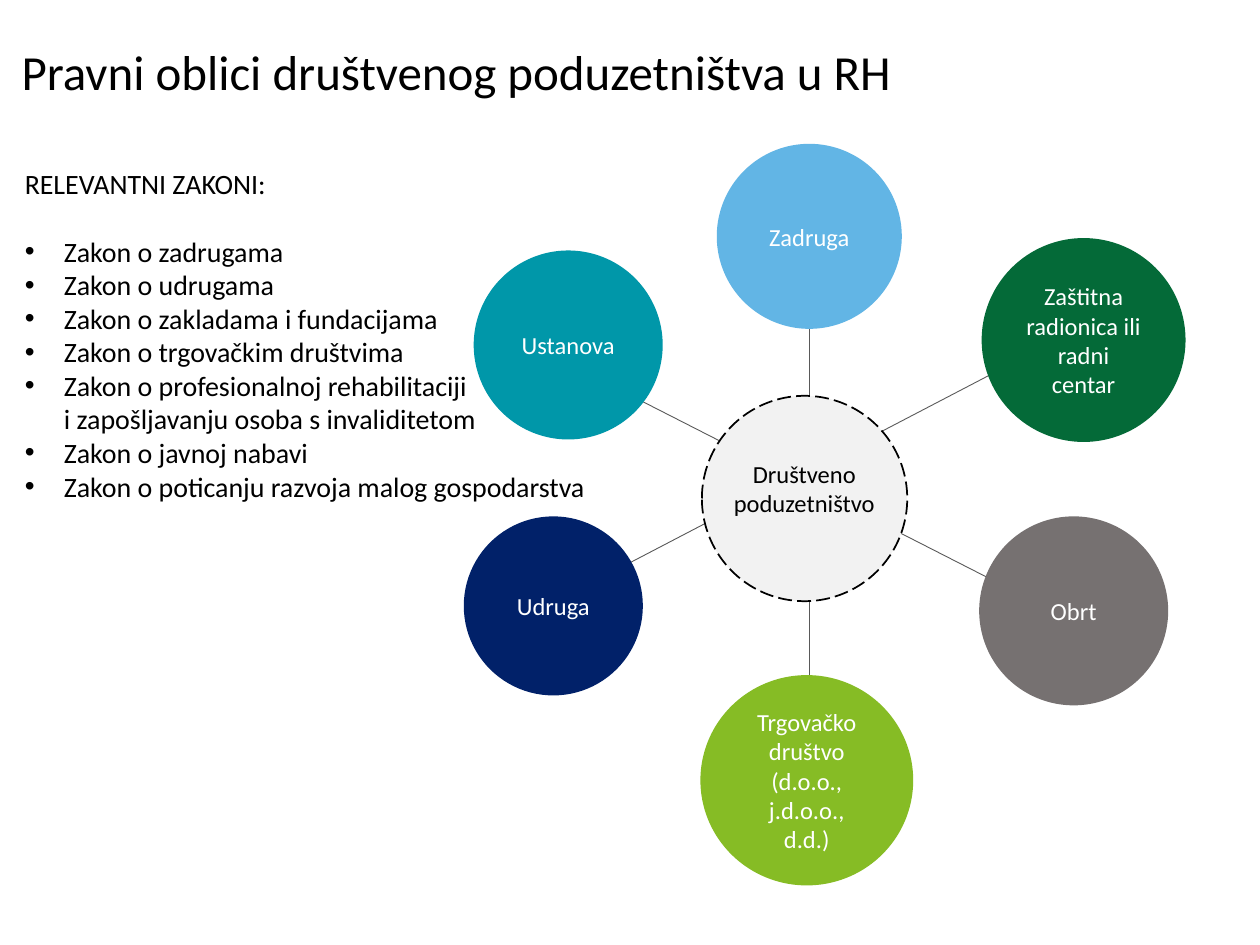
from dataclasses import dataclass
from typing import NamedTuple

from lxml.etree import SubElement
from pptx import Presentation
from pptx.dml.color import RGBColor
from pptx.enum.dml import MSO_LINE
from pptx.enum.shapes import MSO_CONNECTOR, MSO_SHAPE
from pptx.enum.text import MSO_ANCHOR, MSO_AUTO_SIZE, PP_ALIGN
from pptx.oxml.ns import qn
from pptx.util import Cm, Pt


@dataclass(frozen=True)
class Theme:
    font: str = "Calibri"
    title_size: int = 28
    list_size: int = 16
    label_size: int = 14
    text: str = "000000"
    label: str = "FFFFFF"
    spoke: str = "595959"
    hub: str = "F2F2F2"


class Circle(NamedTuple):
    label: str
    left: float
    top: float
    width: float
    height: float
    color: str


class Spoke(NamedTuple):
    x1: float
    y1: float
    x2: float
    y2: float


class Law(NamedTuple):
    name: str
    bulleted: bool = True


THEME = Theme()
INSET = Cm(0.25)
LIST_INDENT = Cm(0.79)

SPOKES = [
    Spoke(11.46, 11.99, 21.16, 6.93),
    Spoke(21.59, 12.5, 11.63, 7.42),
    Spoke(16.31, 5.66, 16.31, 14.02),
]
HUB = Circle("", 14.15, 7.98, 4.14, 4.14, THEME.hub)
LEGAL_FORMS = [
    Circle("Udruga", 9.35, 10.41, 3.61, 3.61, "012169"),
    Circle("Zaštitna radionica ili radni centar", 19.79, 4.8, 4.11, 4.11, "046A38"),
    Circle("Ustanova", 9.55, 5.05, 3.81, 3.81, "0097A9"),
    Circle("Trgovačko društvo (d.o.o., j.d.o.o., d.d.)", 14.12, 13.61, 4.29, 4.24, "86BC25"),
    Circle("Obrt", 19.74, 10.41, 3.81, 3.81, "767171"),
    Circle("Zadruga", 14.45, 2.9, 3.73, 3.73, "62B5E5"),
]
LAWS = [
    Law("Zakon o zadrugama"),
    Law("Zakon o udrugama"),
    Law("Zakon o zakladama i fundacijama"),
    Law("Zakon o trgovačkim društvima"),
    Law("Zakon o profesionalnoj rehabilitaciji"),
    Law("i zapošljavanju osoba s invaliditetom", bulleted=False),
    Law("Zakon o javnoj nabavi"),
    Law("Zakon o poticanju razvoja malog gospodarstva"),
]


def set_font(para, size: int, color: str = THEME.text) -> None:
    para.font.name = THEME.font
    para.font.size = Pt(size)
    para.font.color.rgb = RGBColor.from_string(color)


def add_title(page, text: str) -> None:
    title = page.shapes.title
    title.left, title.top, title.width, title.height = Cm(0.18), Cm(0), Cm(24.87), Cm(2.87)
    frame = title.text_frame
    frame.text = text
    frame.auto_size = MSO_AUTO_SIZE.NONE
    frame.vertical_anchor = MSO_ANCHOR.MIDDLE
    para = frame.paragraphs[0]
    para.alignment = PP_ALIGN.LEFT
    set_font(para, THEME.title_size)


def add_spoke(page, spoke: Spoke) -> None:
    line = page.shapes.add_connector(MSO_CONNECTOR.STRAIGHT, *map(Cm, spoke))
    line.line.color.rgb = RGBColor.from_string(THEME.spoke)
    line.line.width = Pt(0.5)
    SubElement(line._element.spPr, qn("a:effectLst"))


def add_circle(page, circle: Circle):
    shape = page.shapes.add_shape(MSO_SHAPE.OVAL, *map(Cm, circle[1:5]))
    shape.shadow.inherit = False
    shape.fill.solid()
    shape.fill.fore_color.rgb = RGBColor.from_string(circle.color)
    shape.line.fill.background()
    if circle.label:
        frame = shape.text_frame
        frame.text = circle.label
        frame.word_wrap = True
        frame.vertical_anchor = MSO_ANCHOR.MIDDLE
        frame.margin_left = frame.margin_right = INSET
        frame.margin_top = frame.margin_bottom = INSET
        para = frame.paragraphs[0]
        para.alignment = PP_ALIGN.CENTER
        set_font(para, THEME.label_size, THEME.label)
    return shape


def add_hub(page) -> None:
    hub = add_circle(page, HUB)
    hub.line.color.rgb = RGBColor.from_string(THEME.text)
    hub.line.width = Pt(1)
    hub.line.dash_style = MSO_LINE.LONG_DASH


def add_hub_label(page) -> None:
    box = page.shapes.add_textbox(Cm(13.28), Cm(9.12), Cm(5.87), Cm(1.45))
    frame = box.text_frame
    frame.word_wrap = True
    frame.text = "Društveno\npoduzetništvo"
    for para in frame.paragraphs:
        para.alignment = PP_ALIGN.CENTER
        set_font(para, THEME.label_size)


def indent_law(para, bulleted: bool) -> None:
    """Hang the text after its bullet, or align a continuation line with it."""
    properties = para._p.get_or_add_pPr()
    properties.set("marL", str(LIST_INDENT))
    properties.set("indent", str(-LIST_INDENT if bulleted else 0))
    if bulleted:
        SubElement(properties, qn("a:buFont"), typeface="Arial")
        SubElement(properties, qn("a:buChar"), char="•")


def add_laws(page) -> None:
    box = page.shapes.add_textbox(Cm(0.25), Cm(3.23), Cm(11.96), Cm(7.09))
    frame = box.text_frame
    frame.word_wrap = False
    heading = frame.paragraphs[0]
    heading.text = "RELEVANTNI ZAKONI:"
    heading.space_after = Pt(19.5)
    set_font(heading, THEME.list_size)
    for law in LAWS:
        para = frame.add_paragraph()
        para.text = law.name
        indent_law(para, law.bulleted)
        set_font(para, THEME.list_size)


def main() -> None:
    deck = Presentation()
    deck.slide_width, deck.slide_height = Cm(25.4), Cm(19.05)
    page = deck.slides.add_slide(deck.slide_layouts[5])
    add_title(page, "Pravni oblici društvenog poduzetništva u RH")
    for spoke in SPOKES:
        add_spoke(page, spoke)
    add_hub(page)
    for circle in LEGAL_FORMS:
        add_circle(page, circle)
    add_hub_label(page)
    add_laws(page)
    deck.save("out.pptx")


if __name__ == "__main__":
    main()
